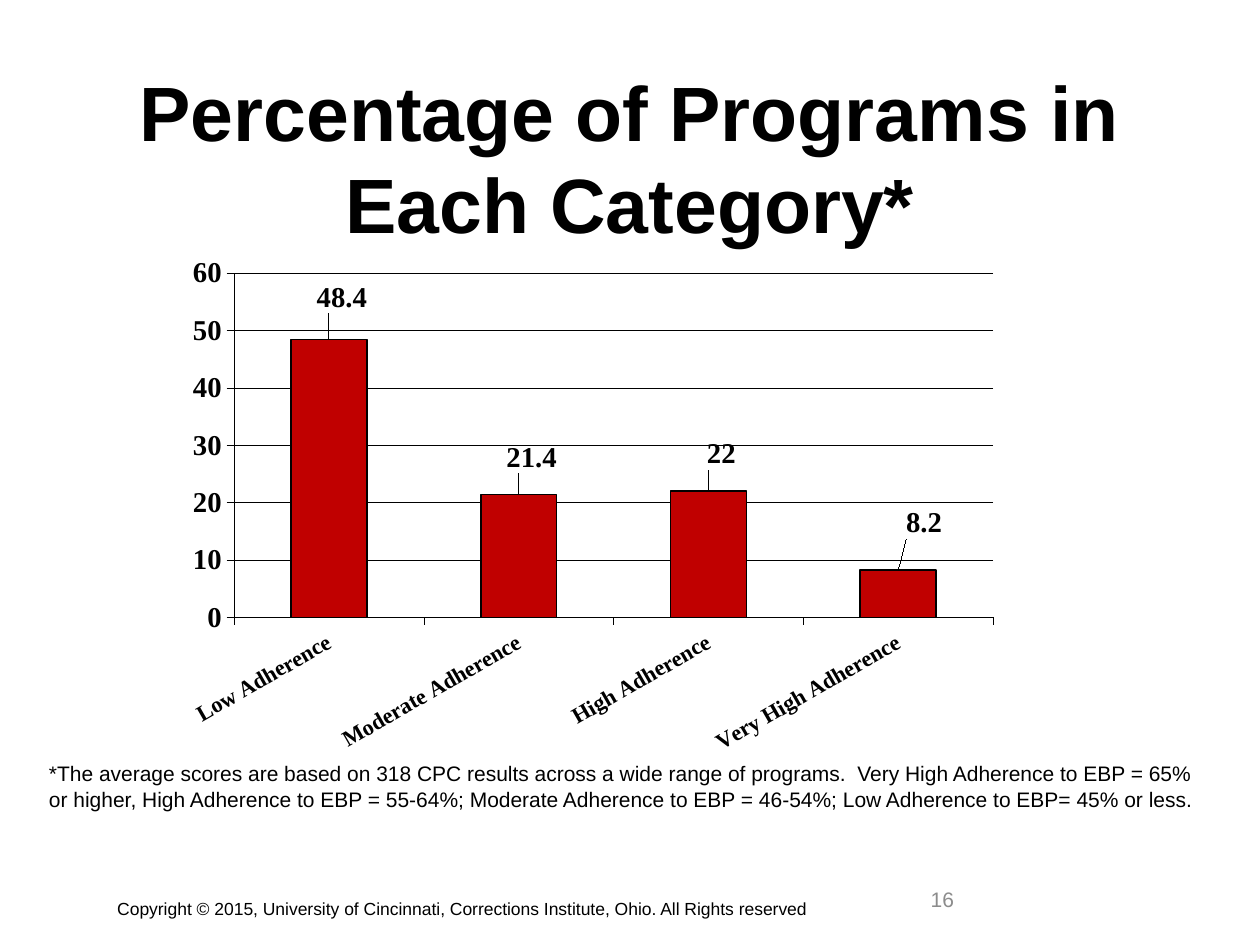
import pptx
import pptx.chart.data
import pptx.dml.color
import pptx.enum.chart
import pptx.enum.text
import pptx.oxml
import pptx.oxml.ns
import pptx.util

Inches, Pt = pptx.util.Inches, pptx.util.Pt
ALIGN, ANCHOR = pptx.enum.text.PP_ALIGN, pptx.enum.text.MSO_ANCHOR

TITLE = "Percentage of Programs in Each Category*"
ADHERENCE = [
    ("Low Adherence", 48.4, {"x": 0.01, "y": -0.04}),
    ("Moderate Adherence", 21.4, {"x": 0.01, "y": -0.03}),
    ("High Adherence", 22, {"x": 0.01, "y": -0.03}),
    ("Very High Adherence", 8.2, {"x": 0.02, "y": -0.05}),
]
PLOT_AREA = {"x": 0.208, "y": 0.04, "w": 0.586, "h": 0.659}
FOOTNOTE = [
    "*The average scores are based on 318 CPC results across a wide range of programs.  Very High Adherence to EBP = 65%",
    "or higher, High Adherence to EBP = 55-64%; Moderate Adherence to EBP = 46-54%; Low Adherence to EBP= 45% or less.",
]
COPYRIGHT = "Copyright © 2015, University of Cincinnati, Corrections Institute, Ohio. All Rights reserved"
TEXTS = [
    (FOOTNOTE, (0.29, 5.99, 9.41, 0.5), 12, "000000", ALIGN.LEFT, ANCHOR.TOP, False),
    ([COPYRIGHT], (0.75, 7.08, 5.83, 0.27), 10, "000000", ALIGN.CENTER, ANCHOR.TOP, True),
    (["16"], (7.17, 6.92, 0.5, 0.43), 12, "8C8C8C", ALIGN.RIGHT, ANCHOR.MIDDLE, True),
]


def rgb(code):
    """Return the colour for a hex string."""
    return pptx.dml.color.RGBColor.from_string(code)


def set_font(font, size, color="000000", bold=False, face="Arial"):
    """Set face, size, colour and weight of a font."""
    font.name, font.size, font.bold = face, Pt(size), bold
    font.color.rgb = rgb(color)


def set_line(line, width):
    """Draw a black line of a given width."""
    line.color.rgb = rgb("000000")
    line.width = Pt(width)


def layout(sizes, inner=False):
    """Return a manual chart layout element."""
    modes = '<c:layoutTarget val="inner"/><c:xMode val="edge"/><c:yMode val="edge"/>' if inner else ""
    values = "".join(f'<c:{key} val="{value}"/>' for key, value in sizes.items())
    return pptx.oxml.parse_xml(
        f'<c:layout {pptx.oxml.ns.nsdecls("c")}><c:manualLayout>{modes}{values}</c:manualLayout></c:layout>')


def add_title(slide):
    """Place and format the title placeholder."""
    title = slide.shapes.title
    title.left, title.top, title.width, title.height = map(Inches, (0.75, 0.58, 8.5, 1.33))
    title.text_frame.text = TITLE
    title.text_frame.vertical_anchor = ANCHOR.MIDDLE
    title.text_frame.auto_size = pptx.enum.text.MSO_AUTO_SIZE.NONE
    heading = title.text_frame.paragraphs[0]
    heading.alignment = ALIGN.CENTER
    set_font(heading.font, 44, bold=True)


def add_adherence_chart(slide):
    """Add the column chart of programs by adherence."""
    enums = pptx.enum.chart
    data = pptx.chart.data.CategoryChartData()
    data.categories = [name for name, _, _ in ADHERENCE]
    data.add_series("Series 1", [value for _, value, _ in ADHERENCE])
    chart = slide.shapes.add_chart(
        enums.XL_CHART_TYPE.COLUMN_CLUSTERED, *map(Inches, (-0.28, 2, 10.28, 4.15)), data).chart
    chart.has_legend = chart.has_title = False
    set_font(chart.font, 16.4, bold=True, face="Times New Roman")

    plot_area = chart._chartSpace.chart.plotArea
    for automatic in plot_area.findall(pptx.oxml.ns.qn("c:layout")):
        plot_area.remove(automatic)
    plot_area.insert(0, layout(PLOT_AREA, inner=True))

    levels, categories = chart.value_axis, chart.category_axis
    for axis, size in ((levels, 16.4), (categories, 12.8)):
        axis.major_tick_mark = enums.XL_TICK_MARK.OUTSIDE
        axis.minor_tick_mark = enums.XL_TICK_MARK.NONE
        set_line(axis.format.line, 0.23)
        set_font(axis.tick_labels.font, size, bold=True, face="Times New Roman")
    levels.minimum_scale, levels.maximum_scale, levels.major_unit = 0, 60, 10
    levels.has_major_gridlines = True
    set_line(levels.major_gridlines.format.line, 0.23)
    categories.tick_label_position = enums.XL_TICK_LABEL_POSITION.LOW
    categories._element.txPr.bodyPr.set("rot", "-1800000")

    plot = chart.plots[0]
    plot.gap_width, plot.vary_by_categories = 150, False
    programs = plot.series[0]
    programs.format.fill.solid()
    programs.format.fill.fore_color.rgb = rgb("C00000")
    set_line(programs.format.line, 0.91)
    labels = programs.data_labels
    labels.show_value = True
    labels.position = enums.XL_LABEL_POSITION.OUTSIDE_END
    set_font(labels.font, 16.4, bold=True, face="Times New Roman")
    for index, (_, _, offset) in enumerate(ADHERENCE):
        label = programs.points[index].data_label
        set_font(label.font, 16.4, bold=True, face="Times New Roman")
        label.position = enums.XL_LABEL_POSITION.OUTSIDE_END
        label._dLbl.insert(1, layout(offset))


def add_text(slide, lines, place, size, color, align, anchor, wrap):
    """Add a text box with one paragraph per line."""
    frame = slide.shapes.add_textbox(*map(Inches, place)).text_frame
    frame.word_wrap, frame.vertical_anchor = wrap, anchor
    frame.text = "\n".join(lines)
    for paragraph in frame.paragraphs:
        paragraph.alignment = align
        set_font(paragraph.font, size, color)


def main():
    """Build and save the slide."""
    deck = pptx.Presentation()
    deck.slide_width, deck.slide_height = Inches(10), Inches(7.5)
    slide = deck.slides.add_slide(deck.slide_layouts[5])
    add_title(slide)
    add_adherence_chart(slide)
    for text in TEXTS:
        add_text(slide, *text)
    deck.save("out.pptx")


if __name__ == "__main__":
    main()
